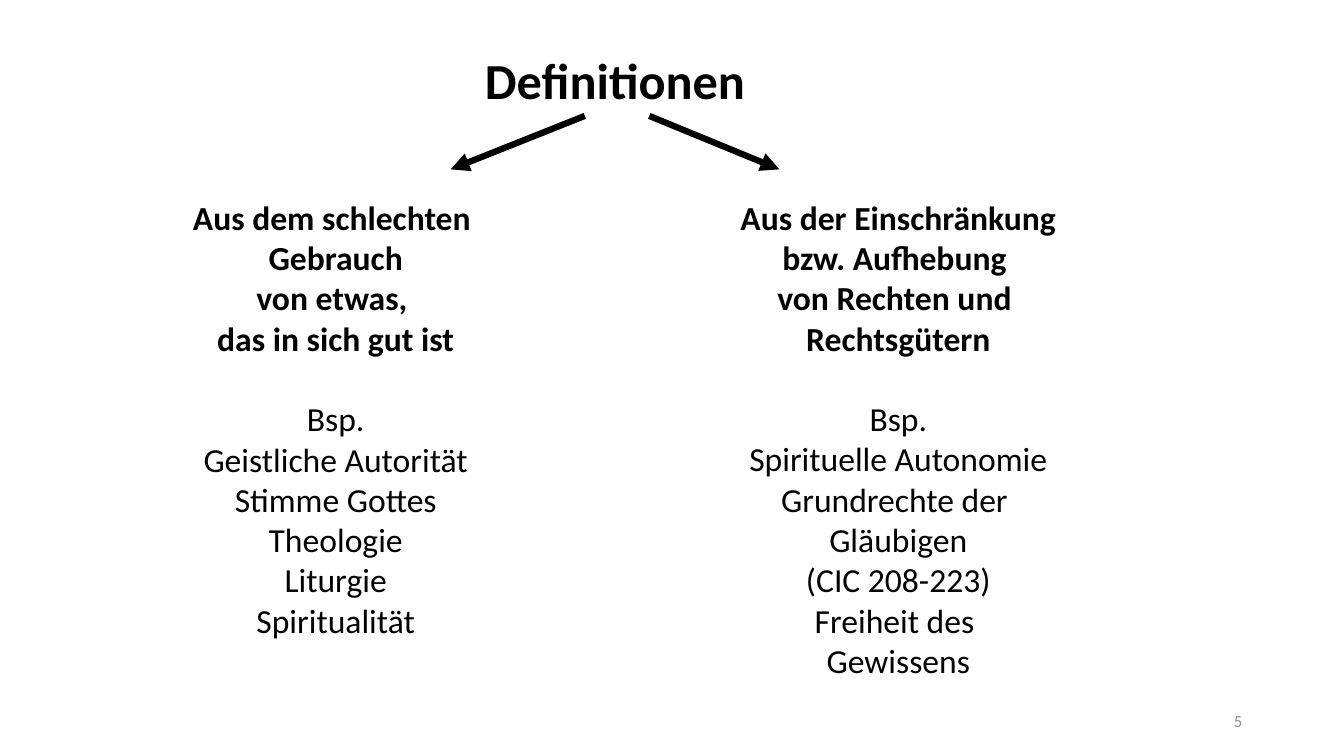
from dataclasses import dataclass

from lxml.etree import SubElement
from pptx import Presentation
from pptx.dml.color import RGBColor
from pptx.enum.shapes import MSO_CONNECTOR
from pptx.enum.text import MSO_ANCHOR, PP_ALIGN
from pptx.oxml.ns import qn
from pptx.slide import Slide
from pptx.text.text import TextFrame
from pptx.util import Inches, Pt

COLORS = {"ink": "000000", "page_number": "8C8C8C"}
FONT = "Calibri"
COLUMN_TOP = 1.9
ARROW_TOP, ARROW_BOTTOM = 1.15, 1.68
EXAMPLES_GAP = 28.8  # points, one line of column text


@dataclass(frozen=True)
class Definition:
    left: float
    width: float
    height: float
    arrow_start: float
    arrow_end: float
    statement: tuple[str, ...]
    examples: tuple[str, ...]


DEFINITIONS = (
    Definition(
        1.8, 3.06, 5.35, 5.8, 4.47,
        ("Aus dem schlechten ", "Gebrauch", "von etwas, ", "das in sich gut ist"),
        ("Bsp.", "Geistliche Autorität", "Stimme Gottes", "Theologie",
         "Liturgie", "Spiritualität"),
    ),
    Definition(
        7.23, 3.36, 5.76, 6.44, 7.73,
        ("Aus der Einschränkung", "bzw. Aufhebung ", "von Rechten und ",
         "Rechtsgütern"),
        ("Bsp.", "Spirituelle Autonomie", "Grundrechte der ", "Gläubigen",
         "(CIC 208-223)", "Freiheit des ", "Gewissens"),
    ),
)


def add_frame(slide: Slide, left: float, top: float, width: float, height: float,
              wrap: bool = False, anchor: MSO_ANCHOR = MSO_ANCHOR.TOP) -> TextFrame:
    frame = slide.shapes.add_textbox(
        Inches(left), Inches(top), Inches(width), Inches(height)).text_frame
    frame.word_wrap = wrap
    frame.vertical_anchor = anchor
    return frame


def write(frame: TextFrame, text: str, *, size: float = 24, bold: bool = False,
          color: str = "ink", align: PP_ALIGN = PP_ALIGN.CENTER,
          space_before: float = 0) -> None:
    """Add one paragraph, using the frame's first one while it is empty."""
    first = frame.paragraphs[0]
    paragraph = frame.add_paragraph() if first.runs else first
    paragraph.alignment = align
    paragraph.space_before = Pt(space_before)
    run = paragraph.add_run()
    run.text = text
    run.font.name = FONT
    run.font.size = Pt(size)
    run.font.bold = bold
    run.font.color.rgb = RGBColor.from_string(COLORS[color])


def add_arrow(slide: Slide, start: float, end: float) -> None:
    arrow = slide.shapes.add_connector(
        MSO_CONNECTOR.STRAIGHT, Inches(start), Inches(ARROW_TOP),
        Inches(end), Inches(ARROW_BOTTOM))
    arrow.line.width = Pt(4.5)
    arrow.line.color.rgb = RGBColor.from_string(COLORS["ink"])
    SubElement(arrow.line._get_or_add_ln(), qn("a:tailEnd"), type="triangle")
    SubElement(arrow._element.spPr, qn("a:effectLst"))


def add_definition(slide: Slide, definition: Definition) -> None:
    column = add_frame(slide, definition.left, COLUMN_TOP,
                       definition.width, definition.height)
    for line in definition.statement:
        write(column, line, bold=True)
    for index, line in enumerate(definition.examples):
        write(column, line, space_before=0 if index else EXAMPLES_GAP)
    add_arrow(slide, definition.arrow_start, definition.arrow_end)


def main() -> None:
    presentation = Presentation()
    presentation.slide_width = Inches(13.33)
    presentation.slide_height = Inches(7.5)
    slide = presentation.slides.add_slide(presentation.slide_layouts[6])

    title = add_frame(slide, 4.69, 0.44, 2.82, 0.71)
    write(title, "Definitionen", size=36, bold=True)
    for definition in DEFINITIONS:
        add_definition(slide, definition)
    page_number = add_frame(slide, 9.42, 6.95, 3, 0.4,
                            wrap=True, anchor=MSO_ANCHOR.MIDDLE)
    write(page_number, "5", size=12, color="page_number", align=PP_ALIGN.RIGHT)

    presentation.save("out.pptx")


if __name__ == "__main__":
    main()
